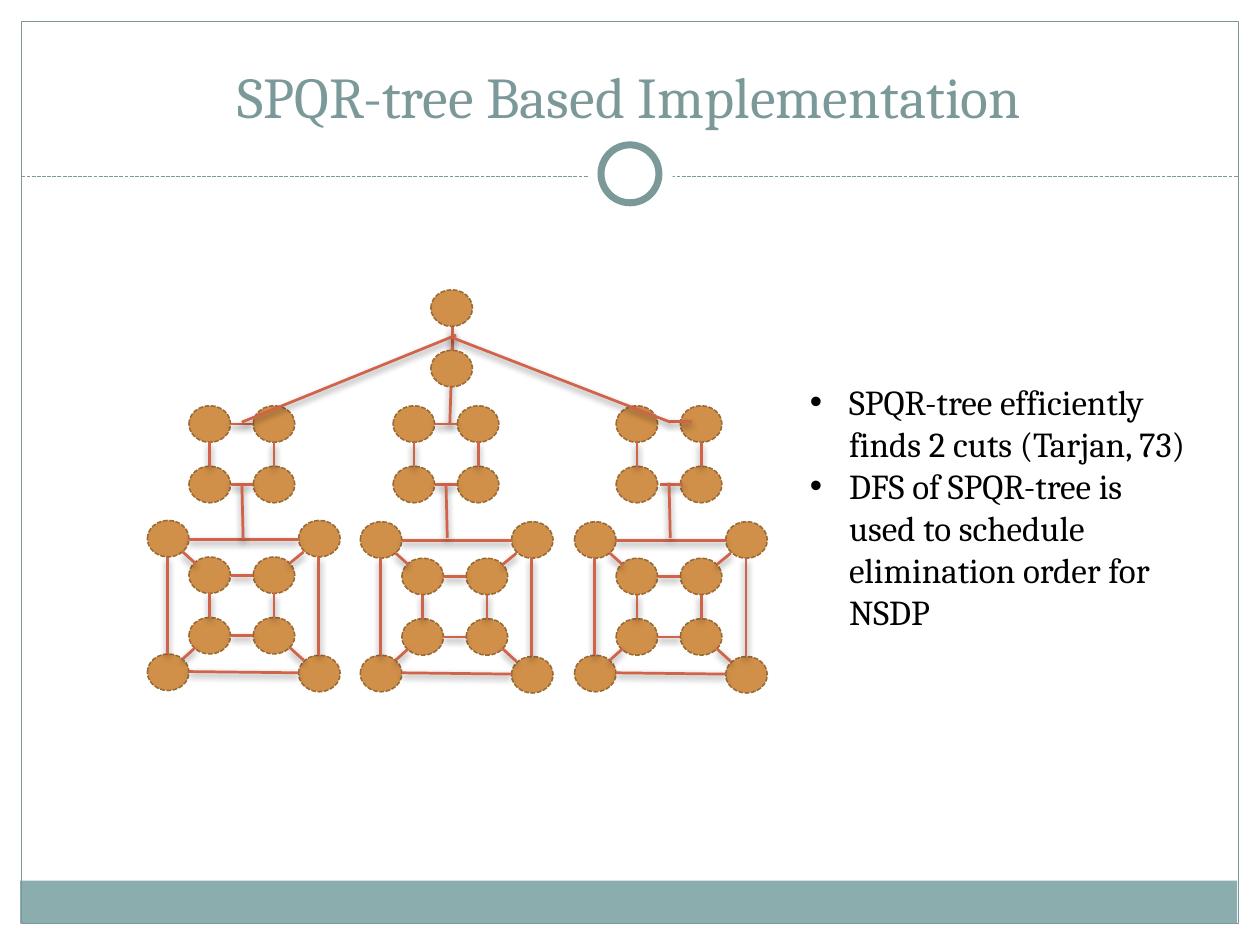
import pptx
import pptx.util
import pptx.dml.color
import pptx.enum.dml
import pptx.enum.shapes
import pptx.enum.text
import pptx.oxml
import pptx.oxml.ns

Inches, Pt = pptx.util.Inches, pptx.util.Pt
rgb = pptx.dml.color.RGBColor.from_string
MSO_SHAPE = pptx.enum.shapes.MSO_SHAPE
DASH = pptx.enum.dml.MSO_LINE.SQUARE_DOT
NODE_W, NODE_H = 0.33, 0.29
STEP_X, STEP_Y = 0.51, 0.48
SHADOW = (
    f'<a:effectLst {pptx.oxml.ns.nsdecls("a")}>'
    '<a:outerShdw blurRad="50800" dist="25400" dir="5400000" rotWithShape="0">'
    '<a:srgbClr val="000000"><a:alpha val="45000"/></a:srgbClr>'
    '</a:outerShdw></a:effectLst>'
)

prs = pptx.Presentation()
prs.slide_width, prs.slide_height = Inches(10), Inches(7.5)
s = prs.slides.add_slide(prs.slide_layouts[6])


def add_shape(kind, x, y, w, h, fill=None, line=None, width=0.75):
    sp = s.shapes.add_shape(kind, Inches(x), Inches(y), Inches(w), Inches(h))
    sp.shadow.inherit = False
    if fill:
        sp.fill.solid()
        sp.fill.fore_color.rgb = rgb(fill)
    else:
        sp.fill.background()
    if line:
        sp.line.color.rgb = rgb(line)
        sp.line.width = Pt(width)
    else:
        sp.line.fill.background()
    return sp


def add_line(x1, y1, x2, y2, color="D16349", width=1.57, shadow=SHADOW):
    c = s.shapes.add_connector(pptx.enum.shapes.MSO_CONNECTOR.STRAIGHT,
                               Inches(x1), Inches(y1), Inches(x2), Inches(y2))
    c.line.color.rgb = rgb(color)
    c.line.width = Pt(width)
    c._element.spPr.append(pptx.oxml.parse_xml(shadow))
    return c


# Frame, footer band and divider with ring
add_shape(MSO_SHAPE.RECTANGLE, 0.16, 6.99, 9.66, 0.34, "8CADAE")
add_shape(MSO_SHAPE.RECTANGLE, 0.17, 0.17, 9.66, 7.16, None, "7C999A")
no_shadow = f'<a:effectLst {pptx.oxml.ns.nsdecls("a")}/>'
add_line(0.17, 1.4, 9.83, 1.4, "7C999A", 0.75, no_shadow).line.dash_style = DASH
add_shape(MSO_SHAPE.OVAL, 4.67, 1.05, 0.67, 0.67, "FFFFFF")
add_shape(MSO_SHAPE.OVAL, 4.77, 1.15, 0.46, 0.46, "FFFFFF", "7C999A", 4)

# Title
tb = s.shapes.add_textbox(Inches(0.33), Inches(0.25), Inches(9.33), Inches(0.83))
tf = tb.text_frame
tf.word_wrap = True
tf.vertical_anchor = pptx.enum.text.MSO_ANCHOR.BOTTOM
tf.text = "SPQR-tree Based Implementation"
p = tf.paragraphs[0]
p.alignment = pptx.enum.text.PP_ALIGN.CENTER
r = p.runs[0]
r.font.size, r.font.name = Pt(33), "Cambria"
r.font.color.rgb = rgb("7C999A")

# Inner squares: left, top, shift of the top edge, shift of the bottom edge
upper = [(3.12, 3.22, (0, 0), (0, 0)),
         (1.5, 3.22, (0, 0), (0, 0)),
         (4.89, 3.22, (0.09, -0.02), (0.02, 0))]
lower = [(1.5, 4.42, (0, 0), (0, 0)),
         (3.19, 4.43, (0, 0), (0, 0)),
         (4.89, 4.43, (0, 0), (0, 0))]

# Tree edges that run behind the nodes
add_line(3.59, 2.74, 3.57, 3.37)
add_line(3.59, 2.59, 3.59, 2.78)

# Nodes: root pair, the four corners of each square, outer rings
nodes = [(3.42, 2.3), (3.42, 2.78)]
for x, y, top, bottom in upper + lower:
    nodes += [(x + dx, y + dy) for dx in (0, STEP_X) for dy in (0, STEP_Y)]
for x, y, top, bottom in lower:
    nodes += [(x - 0.33, y - 0.29), (x - 0.33, y + 0.77),
              (x + 0.87, y - 0.29), (x + 0.87, y + 0.78)]
for x, y in nodes:
    sp = add_shape(MSO_SHAPE.OVAL, x, y, NODE_W, NODE_H, "D19049", "9B6B36", 0.9)
    sp.line.dash_style = DASH

# Edges of the inner squares
for x, y, top, bottom in upper + lower:
    for dx in (0, STEP_X):
        cx = x + dx + NODE_W / 2
        add_line(cx, y + NODE_H, cx, y + STEP_Y)
    for dy, (sx, sy) in ((0, top), (STEP_Y, bottom)):
        cy = y + dy + NODE_H / 2 + sy
        add_line(x + NODE_W + sx, cy, x + STEP_X + sx, cy)

# Outer rings and spokes, relative to the inner square
ring = [(-0.17, 0, -0.17, 0.77), (1.03, 0, 1.03, 0.78),
        (0, -0.14, 0.87, -0.14), (0, 0.91, 0.87, 0.92),
        (0.91, -0.04, 0.8, 0.05), (-0.05, -0.04, 0.05, 0.05),
        (-0.05, 0.81, 0.05, 0.72), (0.91, 0.82, 0.8, 0.72)]
for x, y, top, bottom in lower:
    for x1, y1, x2, y2 in ring:
        add_line(x + x1, y + y1, x + x2, y + y2)

# Branches and links between levels
for link in [(3.62, 2.66, 1.92, 3.35), (3.59, 2.68, 5.32, 3.35),
             (1.92, 3.84, 1.93, 4.28), (3.54, 3.84, 3.55, 4.27),
             (5.31, 3.83, 5.32, 4.27)]:
    add_line(*link)

# Bullets
tb = s.shapes.add_textbox(Inches(6.33), Inches(2.97), Inches(3.25), Inches(2.46))
tf = tb.text_frame
tf.word_wrap = True
tf.text = ("SPQR-tree efficiently finds 2 cuts (Tarjan, 73)\n"
           "DFS of SPQR-tree is used to schedule elimination order for NSDP")
for p in tf.paragraphs:
    pPr = p._p.get_or_add_pPr()
    pPr.set("marL", str(Inches(0.31)))
    pPr.set("indent", str(-Inches(0.31)))
    for xml in ('<a:buFont {} typeface="Arial"/>', '<a:buChar {} char="•"/>'):
        pPr.append(pptx.oxml.parse_xml(xml.format(pptx.oxml.ns.nsdecls("a"))))
    r = p.runs[0]
    r.font.size, r.font.name = Pt(20), "Cambria"
    r.font.color.rgb = rgb("000000")

prs.save("out.pptx")
